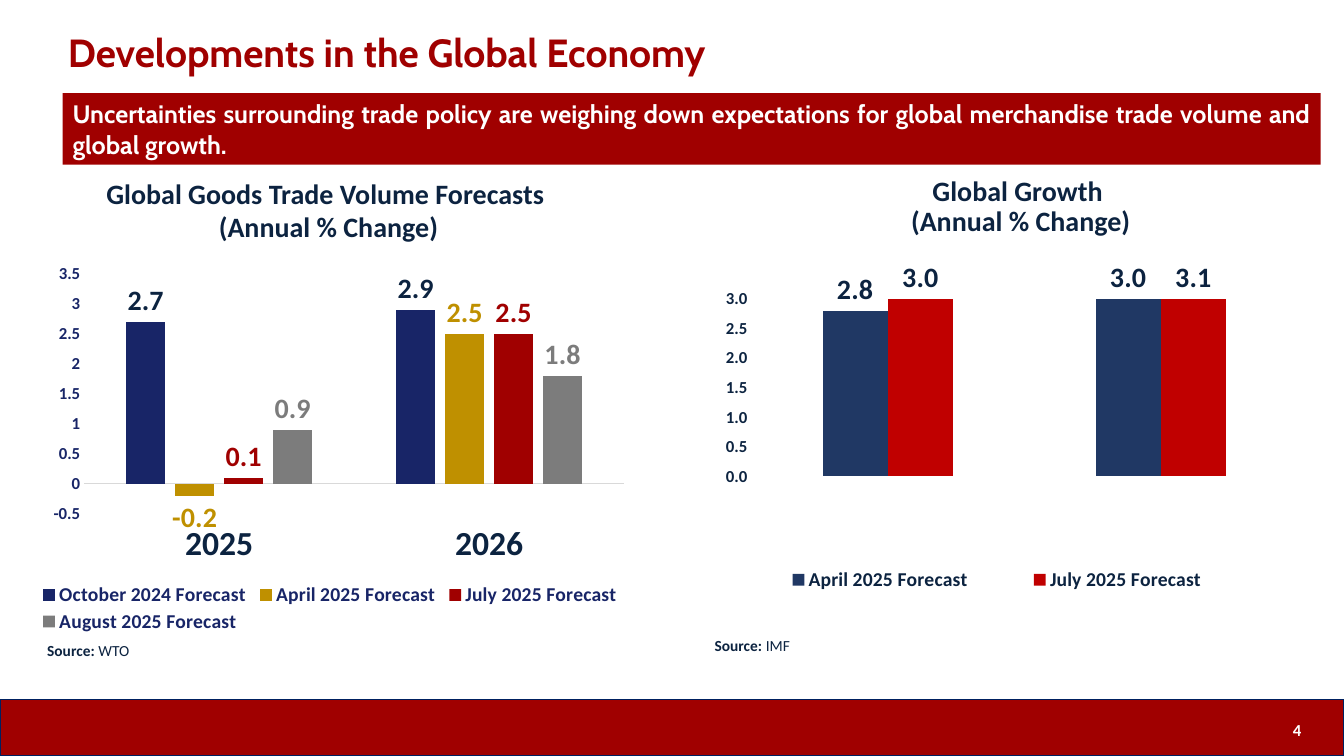
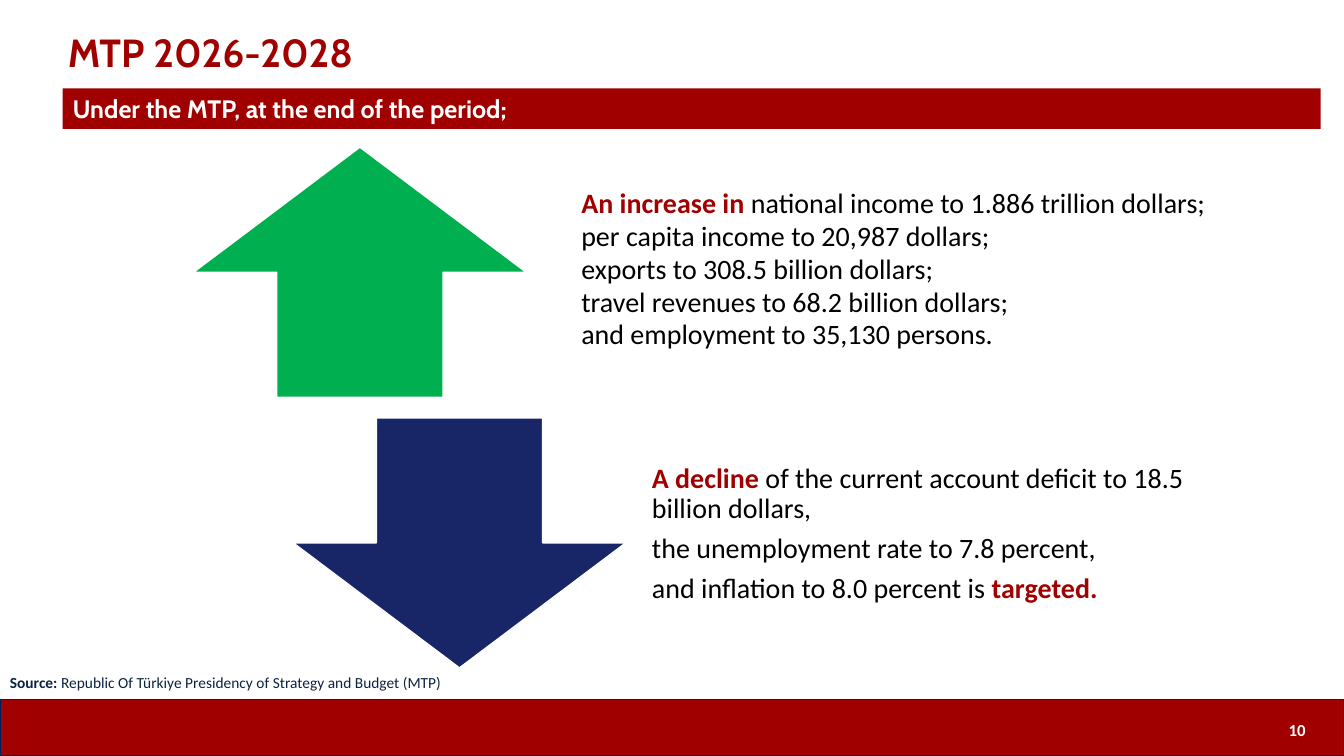
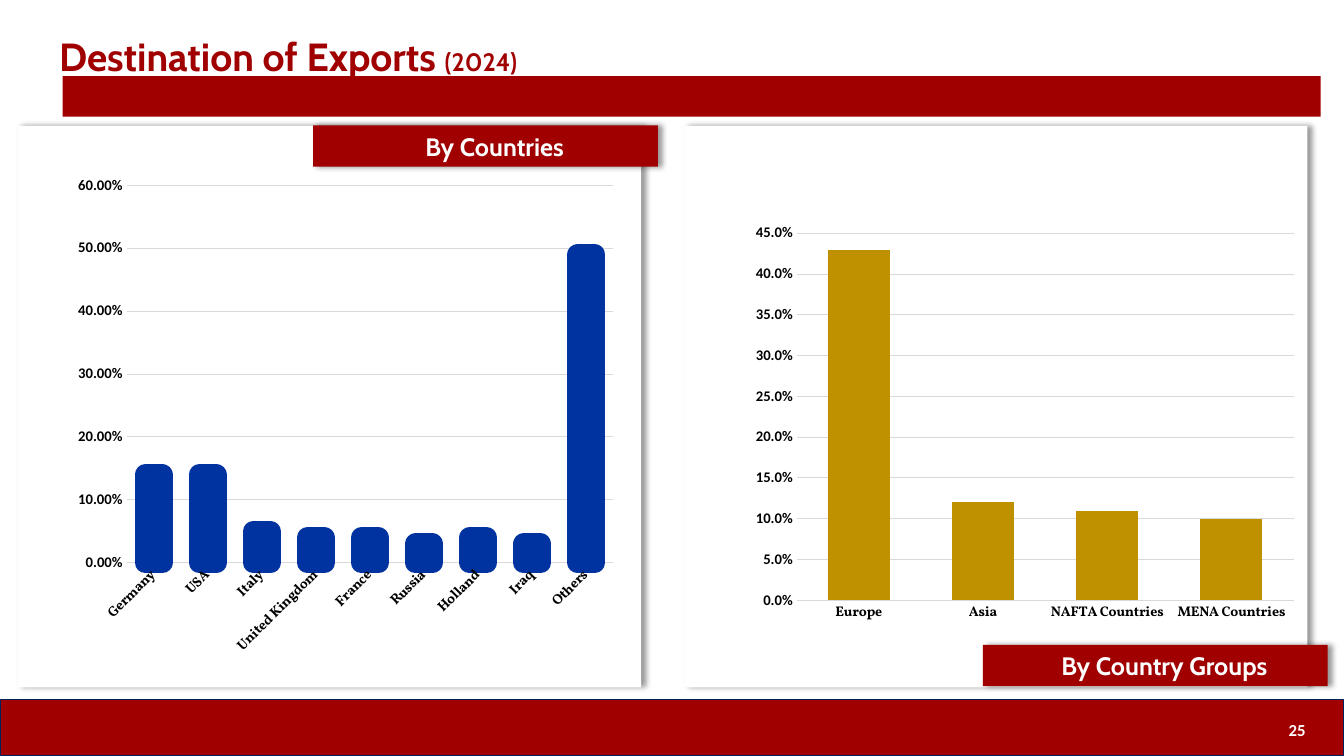
from dataclasses import dataclass
from typing import NamedTuple, Optional

from lxml.etree import SubElement
from pptx import Presentation
from pptx.chart.data import CategoryChartData
from pptx.dml.color import RGBColor
from pptx.enum.chart import (XL_CHART_TYPE, XL_LABEL_POSITION, XL_LEGEND_POSITION,
                             XL_TICK_LABEL_POSITION, XL_TICK_MARK)
from pptx.enum.shapes import MSO_SHAPE
from pptx.enum.text import MSO_ANCHOR, PP_ALIGN
from pptx.oxml.ns import qn
from pptx.util import Cm, Pt

# Shared colours and fonts
RED = RGBColor(0xA0, 0x00, 0x00)
BRIGHT_RED = RGBColor(0xC0, 0x00, 0x00)
NAVY = RGBColor(0x0C, 0x23, 0x40)
EDGE = RGBColor(0x00, 0x20, 0x60)
INDIGO = RGBColor(0x18, 0x25, 0x67)
STEEL = RGBColor(0x20, 0x38, 0x64)
BLUE = RGBColor(0x00, 0x33, 0xA0)
GOLD = RGBColor(0xBF, 0x90, 0x00)
GREEN = RGBColor(0x00, 0xB0, 0x50)
GREY = RGBColor(0x7C, 0x7C, 0x7C)
LIGHT = RGBColor(0xD9, 0xD9, 0xD9)
BLACK = RGBColor(0x00, 0x00, 0x00)
WHITE = RGBColor(0xFF, 0xFF, 0xFF)
HEAD, BODY, SERIF = "Cabin", "Calibri", "Vollkorn"

SLIDE_W, SLIDE_H = 33.87, 19.05
FOOTER_TOP = 17.62
NO_INSETS = (0, 0, 0, 0)
DEFAULT_INSETS = (0.25, 0.13, 0.25, 0.13)
ARROW_INSETS = (0.41, 0, 0.41, 0.41)


class Box(NamedTuple):
    """Left, top, width and height in centimetres."""
    x: float
    y: float
    w: float
    h: float

    def emu(self):
        return [Cm(v) for v in self]


class Run(NamedTuple):
    text: str
    color: Optional[RGBColor] = None
    bold: Optional[bool] = None
    size: Optional[float] = None


@dataclass
class Style:
    size: float
    color: RGBColor
    font: str = BODY
    bold: bool = True
    align: PP_ALIGN = PP_ALIGN.LEFT
    spacing: Optional[float] = None
    after: float = 0
    anchor: MSO_ANCHOR = MSO_ANCHOR.TOP
    insets: tuple = DEFAULT_INSETS


TITLE = Style(28, RED, HEAD, spacing=0.9, anchor=MSO_ANCHOR.MIDDLE, insets=(0.13,) * 4)
BANNER = Style(18, WHITE, HEAD, align=PP_ALIGN.JUSTIFY, anchor=MSO_ANCHOR.MIDDLE)
TAG = Style(18, WHITE, HEAD, align=PP_ALIGN.CENTER, anchor=MSO_ANCHOR.MIDDLE,
            insets=(0.46, 0, 0, 0))
PAGE = Style(12, WHITE, align=PP_ALIGN.CENTER, anchor=MSO_ANCHOR.MIDDLE, insets=NO_INSETS)
SOURCE = Style(11, NAVY, bold=False)
CHART_TITLE = Style(20, NAVY, align=PP_ALIGN.CENTER)
TIGHT_TITLE = Style(20, NAVY, align=PP_ALIGN.CENTER, spacing=0.9)
RISE = Style(20, BLACK, bold=False, spacing=0.98, anchor=MSO_ANCHOR.MIDDLE,
             insets=ARROW_INSETS)
FALL = Style(20, BLACK, bold=False, spacing=0.9, after=7, anchor=MSO_ANCHOR.MIDDLE,
             insets=ARROW_INSETS)


@dataclass
class Series:
    name: str
    values: tuple
    color: RGBColor
    label: Optional[RGBColor] = None
    outline: float = 0


@dataclass
class ChartSpec:
    box: Box
    cats: tuple
    series: list
    low: float
    high: float
    step: float
    fmt: str
    color: RGBColor
    plot: tuple
    axis_size: float = 12
    gap: int = 219
    overlap: int = 0
    cat_font: str = BODY
    cat_size: float = 10
    cat_color: RGBColor = BLACK
    cat_line: float = 0.75
    cat_visible: bool = True
    cat_place: XL_TICK_LABEL_POSITION = XL_TICK_LABEL_POSITION.NEXT_TO_AXIS
    cat_turn: int = 0
    grid: bool = False
    label_fmt: str = "0.0"
    legend: Optional[tuple] = None


# Text and shapes
def set_font(font, size: float, color: RGBColor, name: str, bold: bool = True) -> None:
    font.size, font.name, font.bold = Pt(size), name, bold
    font.color.rgb = color


def write(sp, paras: list, st: Style) -> None:
    tf = sp.text_frame
    tf.word_wrap = True
    tf.vertical_anchor = st.anchor
    (tf.margin_left, tf.margin_top,
     tf.margin_right, tf.margin_bottom) = [Cm(v) for v in st.insets]
    for i, runs in enumerate(paras):
        p = tf.paragraphs[0] if i == 0 else tf.add_paragraph()
        p.alignment = st.align
        p.space_after = Pt(st.after)
        if st.spacing:
            p.line_spacing = st.spacing
        set_font(p.font, st.size, st.color, st.font, st.bold)
        for run in runs:
            for j, line in enumerate(run.text.split("\n")):
                if j:
                    p.add_line_break()
                r = p.add_run()
                r.text = line
                if run.color is not None:
                    r.font.color.rgb = run.color
                if run.bold is not None:
                    r.font.bold = run.bold
                if run.size:
                    r.font.size = Pt(run.size)


def add_text(s, box: Box, paras: list, st: Style) -> None:
    write(s.shapes.add_textbox(*box.emu()), paras, st)


def add_block(s, kind: MSO_SHAPE, box: Box, fill: Optional[RGBColor] = None,
              line: Optional[RGBColor] = None):
    sp = s.shapes.add_shape(kind, *box.emu())
    sp.shadow.inherit = False
    if fill is None:
        sp.fill.background()
    else:
        sp.fill.solid()
        sp.fill.fore_color.rgb = fill
    if line is None:
        sp.line.fill.background()
    else:
        sp.line.color.rgb = line
        sp.line.width = Pt(1)
    return sp


def add_card(s, box: Box, fill: RGBColor):
    """A square-cornered card with a soft shadow to its right."""
    sp = add_block(s, MSO_SHAPE.ROUND_2_SAME_RECTANGLE, box, fill)
    sp.adjustments[0] = sp.adjustments[1] = 0
    effects = sp._element.spPr.find(qn("a:effectLst"))
    shadow = SubElement(effects, qn("a:outerShdw"), blurRad=str(Pt(4)),
                        dist=str(Pt(3)), dir="0", algn="l", rotWithShape="0")
    tone = SubElement(shadow, qn("a:srgbClr"), val="000000")
    SubElement(tone, qn("a:alpha"), val="40000")
    return sp


def add_source(s, x: float, y: float, w: float, text: str) -> None:
    add_text(s, Box(x, y, w, 0.74), [[Run("Source: ", bold=True), Run(text)]], SOURCE)


# Charts
def set_layout(parent, index: int, frame: tuple, inner: bool = False) -> None:
    for old in parent.findall(qn("c:layout")):
        parent.remove(old)
    layout = parent.makeelement(qn("c:layout"), {})
    parent.insert(index, layout)
    manual = SubElement(layout, qn("c:manualLayout"))
    if inner:
        SubElement(manual, qn("c:layoutTarget"), val="inner")
    for tag in ("xMode", "yMode"):
        SubElement(manual, qn("c:" + tag), val="edge")
    for tag, value in zip("xywh", frame):
        SubElement(manual, qn("c:" + tag), val=str(value))


def add_columns(s, c: ChartSpec) -> None:
    data = CategoryChartData()
    data.categories = c.cats
    for row in c.series:
        data.add_series(row.name, row.values)
    ch = s.shapes.add_chart(XL_CHART_TYPE.COLUMN_CLUSTERED, *c.box.emu(), data).chart
    ch.has_title = False
    set_font(ch.font, 10, c.color, BODY)
    set_layout(ch._chartSpace.chart.plotArea, 0, c.plot, inner=True)

    # Axes
    val, cat = ch.value_axis, ch.category_axis
    val.minimum_scale, val.maximum_scale, val.major_unit = c.low, c.high, c.step
    val.has_major_gridlines = c.grid
    if c.grid:
        val.major_gridlines.format.line.color.rgb = LIGHT
        val.major_gridlines.format.line.width = Pt(0.75)
    val.format.line.fill.background()
    val.tick_labels.number_format = c.fmt
    val.tick_labels.number_format_is_linked = False
    set_font(val.tick_labels.font, c.axis_size, c.color, BODY)
    val.major_tick_mark = cat.major_tick_mark = XL_TICK_MARK.NONE
    cat.visible = c.cat_visible
    if c.cat_visible:
        cat.tick_label_position = c.cat_place
        cat.format.line.color.rgb = LIGHT
        cat.format.line.width = Pt(c.cat_line)
        set_font(cat.tick_labels.font, c.cat_size, c.cat_color, c.cat_font)
        if c.cat_turn:
            body = cat._element.find(qn("c:txPr")).find(qn("a:bodyPr"))
            body.set("rot", str(c.cat_turn * 60000))

    # Columns and their labels
    plot = ch.plots[0]
    plot.vary_by_categories = False
    plot.gap_width, plot.overlap = c.gap, c.overlap
    for ser, row in zip(plot.series, c.series):
        ser.invert_if_negative = False
        ser.format.fill.solid()
        ser.format.fill.fore_color.rgb = row.color
        if row.outline:
            ser.format.line.color.rgb = row.color
            ser.format.line.width = Pt(row.outline)
        if row.label is not None:
            labels = ser.data_labels
            labels.show_value = True
            labels.position = XL_LABEL_POSITION.OUTSIDE_END
            labels.number_format = c.label_fmt
            labels.number_format_is_linked = False
            set_font(labels.font, 20, row.label, BODY)

    # Legend
    ch.has_legend = c.legend is not None
    if c.legend:
        ch.legend.position = XL_LEGEND_POSITION.BOTTOM
        ch.legend.include_in_layout = False
        set_font(ch.legend.font, 14, c.color, BODY)
        set_layout(ch.legend._element, 1, c.legend)


# Title, banner and footer of every slide
def add_page(prs, number: int, title: list, title_at: tuple, banner_top: float,
             banner_h: float, banner: str = ""):
    s = prs.slides.add_slide(prs.slide_layouts[6])
    add_block(s, MSO_SHAPE.RECTANGLE, Box(0, FOOTER_TOP, SLIDE_W, SLIDE_H - FOOTER_TOP),
              RED, EDGE)
    write(add_block(s, MSO_SHAPE.ROUND_2_SAME_RECTANGLE, Box(32.08, FOOTER_TOP, 1.22, 1.5)),
          [[Run(str(number))]], PAGE)
    add_text(s, Box(*title_at, 26.26, 2.74), [title], TITLE)
    sp = add_block(s, MSO_SHAPE.RECTANGLE, Box(1.58, banner_top, 31.7, banner_h), RED)
    if banner:
        write(sp, [[Run(banner)]], BANNER)
    return s


def build_economy(prs) -> None:
    s = add_page(prs, 4, [Run("Developments in the Global Economy")], (1.58, 0), 2.35, 1.8,
                 "Uncertainties surrounding trade policy are weighing down expectations "
                 "for global merchandise trade volume and global growth.")
    add_text(s, Box(0, 4.31, 16.56, 1.96),
             [[Run("Global Goods Trade Volume Forecasts ")], [Run("(Annual % Change)")]],
             CHART_TITLE)
    add_text(s, Box(18.08, 4.33, 15.29, 1.8),
             [[Run("Global Growth \n(Annual % Change)")]], TIGHT_TITLE)
    add_columns(s, ChartSpec(
        Box(0.9, 6.41, 15.29, 9.91), ("2025", "2026"),
        [Series("October 2024 Forecast", (2.7, 2.9), INDIGO, NAVY),
         Series("April 2025 Forecast", (-0.2, 2.5), GOLD, GOLD),
         Series("July 2025 Forecast", (0.1, 2.5), RED, RED),
         Series("August 2025 Forecast", (0.9, 1.8), GREY, GREY)],
        -0.5, 3.5, 0.5, "General", INDIGO, (0.08, 0.05, 0.89, 0.61), overlap=-27,
        cat_size=24, cat_color=NAVY, cat_place=XL_TICK_LABEL_POSITION.LOW,
        legend=(0, 0.83, 0.97, 0.14)))
    add_columns(s, ChartSpec(
        Box(17.71, 6.25, 15.29, 9.14), ("1", "2"),
        [Series("April 2025 Forecast", (2.8, 3.0), STEEL, NAVY),
         Series("July 2025 Forecast", (3.0, 3.1), BRIGHT_RED, NAVY)],
        0, 3, 0.5, "0.0", NAVY, (0.08, 0.14, 0.9, 0.49), cat_visible=False,
        legend=(0.05, 0.87, 0.87, 0.09)))
    add_source(s, 0.94, 16.02, 10.03, "WTO")
    add_source(s, 17.76, 15.9, 10.03, "IMF")


def build_programme(prs) -> None:
    s = add_page(prs, 10, [Run("MTP 2026-2028")], (1.58, 0), 2.23, 1.02,
                 "Under the MTP, at the end of the period;")
    add_block(s, MSO_SHAPE.UP_ARROW, Box(4.88, 3.71, 8.38, 6.3), GREEN, WHITE)
    add_text(s, Box(14.24, 3.84, 16.71, 6.3), [[
        Run("An increase in ", RED, True),
        Run("national income to 1.886 trillion dollars;\n"
            "per capita income to 20,987 dollars;\n"
            "exports to 308.5 billion dollars;\n"
            "travel revenues to 68.2 billion dollars;\n"
            "and employment to 35,130 persons.")]], RISE)
    add_block(s, MSO_SHAPE.DOWN_ARROW, Box(7.39, 10.53, 8.38, 6.3), INDIGO, WHITE)
    add_text(s, Box(16.02, 10.53, 14.73, 6.3), [
        [Run("A decline ", RED, True),
         Run("of the current account deficit to 18.5 billion dollars,")],
        [Run("the unemployment rate to 7.8 percent,")],
        [Run("and inflation to 8.0 percent is "), Run("targeted.", RED, True)]], FALL)
    add_source(s, 0, 16.83, 15.06,
               "Republic Of Türkiye Presidency of Strategy and Budget (MTP)")


def build_exports(prs) -> None:
    s = add_page(prs, 25, [Run("Destination of Exports "), Run("(2024)", size=18)],
                 (1.36, 0.1), 1.92, 1.02)
    for x in (0.46, 17.25):
        add_card(s, Box(x, 3.17, 15.7, 14.15), WHITE)
    add_columns(s, ChartSpec(
        Box(1.64, 4.17, 14.1, 12.52),
        ("Germany", "USA", "Italy", "United Kingdom", "France", "Russia", "Holland",
         "Iraq", "Others"),
        [Series("Series 1", (0.14, 0.14, 0.05, 0.04, 0.04, 0.03, 0.04, 0.03, 0.49),
                BLUE, outline=15)],
        0, 0.6, 0.1, "0.00%", BLACK, (0.11, 0.04, 0.87, 0.76), axis_size=10.5,
        overlap=-27, cat_font=SERIF, cat_turn=-45, grid=True))
    add_columns(s, ChartSpec(
        Box(17.42, 4.08, 15.65, 12.85),
        ("Europe", "Asia", "NAFTA Countries", "MENA Countries"),
        [Series("Series 1", (0.43, 0.12, 0.11, 0.1), GOLD)],
        0, 0.45, 0.05, "0.0%", BLACK, (0.17, 0.14, 0.8, 0.72), axis_size=10.5,
        gap=100, cat_font=SERIF, cat_line=1, grid=True))
    for x, y, text in ((7.89, 3.16, "By Countries"), (24.77, 16.25, "By Country Groups")):
        write(add_card(s, Box(x, y, 8.69, 1.04), RED), [[Run(text)]], TAG)


def main() -> None:
    prs = Presentation()
    prs.slide_width, prs.slide_height = Cm(SLIDE_W), Cm(SLIDE_H)
    build_economy(prs)
    build_programme(prs)
    build_exports(prs)
    prs.save("out.pptx")


if __name__ == "__main__":
    main()
